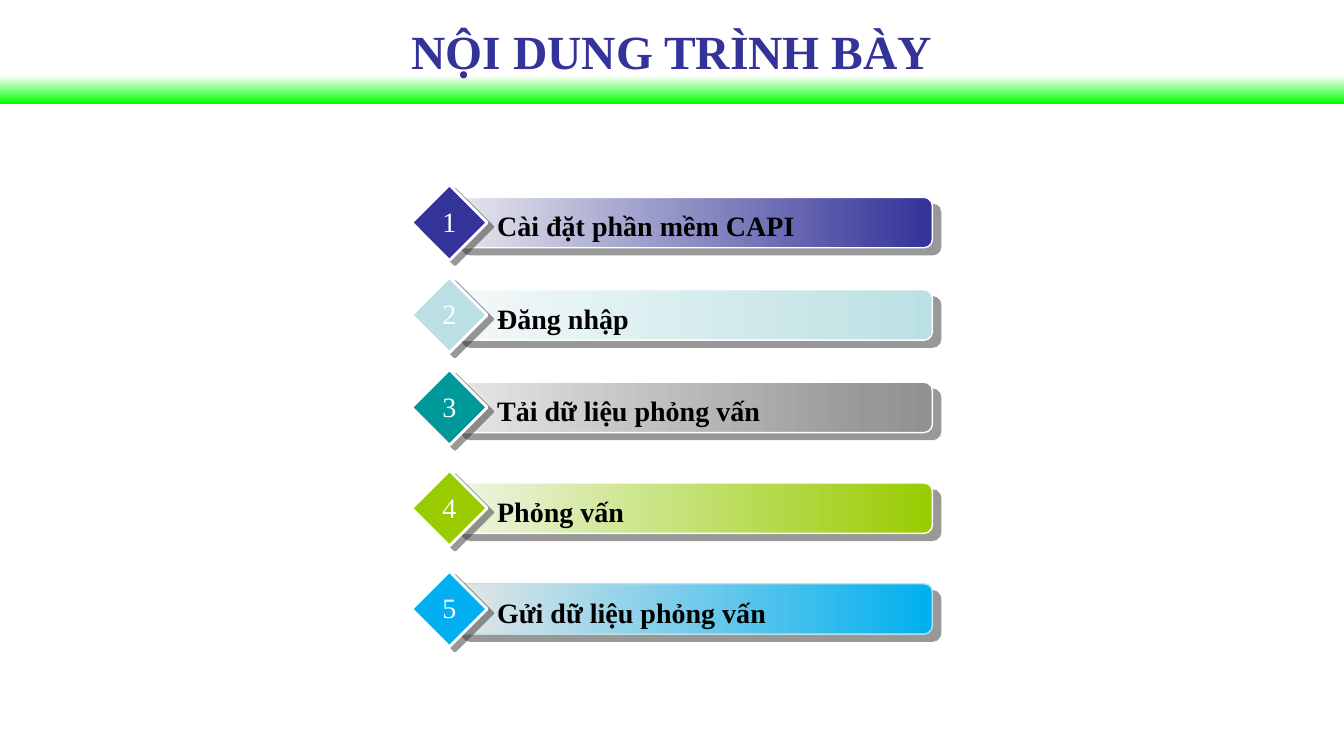
from copy import deepcopy
from dataclasses import dataclass

from lxml import etree
from pptx import Presentation
from pptx.dml.color import RGBColor
from pptx.enum import shapes, text
from pptx.oxml import ns
from pptx.util import Pt


@dataclass(frozen=True)
class Theme:
    font: str = "Times New Roman"
    title_size: int = 34
    item_size: int = 20
    navy: str = "333399"
    white: str = "FFFFFF"
    black: str = "000000"
    green: str = "01FF01"
    pale: str = "BBE0E3"
    teal: str = "009999"
    lime: str = "99CC00"
    sky: str = "00B0F0"
    shadow: str = "333333"


T = Theme()
WIDTH, HEIGHT = 960, 540

# top, label, diamond colour, bar outline, bar gradient stops
ITEMS = [
    (132, "Cài đặt phần mềm CAPI", T.navy, T.white, [(0, "E7E7EE"), (1, T.navy)]),
    (198, "Đăng nhập", T.pale, T.white, [(0, "F3F9F9"), (1, T.pale)]),
    (264, "Tải dữ liệu phỏng vấn", T.teal, T.white,
     [(0, "E6E6E6"), (0.87, "989898"), (1, "919191")]),
    (336, "Phỏng vấn", T.lime, T.white, [(0, "EEF5E6"), (1, T.lime)]),
    (408, "Gửi dữ liệu phỏng vấn", T.sky, T.pale, [(0, "E6E6E6"), (1, T.sky)]),
]


def rgb(value):
    return RGBColor.from_string(value)


def add_box(parent, kind, x, y, w, h):
    sp = parent.add_shape(kind, Pt(x), Pt(y), Pt(w), Pt(h))
    sp.shadow.inherit = False
    return sp


def set_gradient(sp, stops, angle):
    """Fill with (position, colour) stops; angle runs counter-clockwise."""
    sp.fill.gradient()
    sp.fill.gradient_angle = angle
    gs_list = sp._element.spPr.find(".//" + ns.qn("a:gsLst"))
    while len(gs_list) < len(stops):
        gs_list.append(deepcopy(gs_list[-1]))
    for stop, (position, color) in zip(sp.fill.gradient_stops, stops):
        stop.position = position
        stop.color.rgb = rgb(color)


def set_line(sp, color, width):
    sp.line.color.rgb = rgb(color)
    sp.line.width = Pt(width)


def set_shadow(sp, distance, angle):
    """Add a hard, half-transparent shadow."""
    effects = sp._element.spPr.find(ns.qn("a:effectLst"))
    shadow = etree.SubElement(effects, ns.qn("a:outerShdw"), blurRad="0",
                              dist=str(Pt(distance)), dir=str(angle * 60000),
                              algn="ctr", rotWithShape="0")
    color = etree.SubElement(shadow, ns.qn("a:srgbClr"), val=T.shadow)
    etree.SubElement(color, ns.qn("a:alpha"), val="50000")


def add_text(parent, box, words, size, color, bold=False, centred=False):
    x, y, w, h = box
    sp = parent.add_textbox(Pt(x), Pt(y), Pt(w), Pt(h))
    tf = sp.text_frame
    tf.word_wrap = True
    tf.text = words
    p = tf.paragraphs[0]
    p.alignment = text.PP_ALIGN.CENTER if centred else text.PP_ALIGN.LEFT
    font = p.runs[0].font
    font.name, font.size, font.bold = T.font, Pt(size), bold
    font.color.rgb = rgb(color)
    return tf


def add_header(s, x, y, w, h):
    band_h = 20
    band = add_box(s.shapes, shapes.MSO_SHAPE.RECTANGLE, x, y + h - band_h, w, band_h)
    set_gradient(band, [(0, T.white), (1, T.green)], 270)
    band.line.fill.background()
    tf = add_text(s.shapes, (x + 120, y, w - 240, 72), "NỘI DUNG TRÌNH BÀY",
                  T.title_size, T.navy, bold=True, centred=True)
    tf.vertical_anchor = text.MSO_ANCHOR.MIDDLE


def add_item(s, x, y, w, h, number, label, color, outline, stops):
    """Place a numbered diamond, as tall as the box, over a labelled bar."""
    group = s.shapes.add_group_shape().shapes
    bar = add_box(group, shapes.MSO_SHAPE.ROUNDED_RECTANGLE, x + 30, y + 9, w - 30, h - 18)
    set_gradient(bar, stops, 0)
    set_line(bar, outline, 1)
    set_shadow(bar, 7.8, 40)

    diamond = add_box(group, shapes.MSO_SHAPE.DIAMOND, x, y, h, h)
    diamond.fill.solid()
    diamond.fill.fore_color.rgb = rgb(color)
    set_line(diamond, T.white, 2)
    set_shadow(diamond, 5, 37)

    label_box = (x + h, y + 13.5, w - h, 31.5)
    number_box = (x + 12, y + 10.5, h - 24, 31.5)
    for tf in (
        add_text(group, label_box, label, T.item_size, T.black, bold=True),
        add_text(group, number_box, str(number), T.item_size, T.white, centred=True),
    ):
        tf.auto_size = text.MSO_AUTO_SIZE.SHAPE_TO_FIT_TEXT


def main():
    prs = Presentation()
    prs.slide_width, prs.slide_height = Pt(WIDTH), Pt(HEIGHT)
    s = prs.slides.add_slide(prs.slide_layouts[6])
    add_header(s, 0, 0, WIDTH, 74)
    for number, (top, *item) in enumerate(ITEMS, 1):
        add_item(s, 294, top, 372, 54, number, *item)
    prs.save("out.pptx")


if __name__ == "__main__":
    main()
